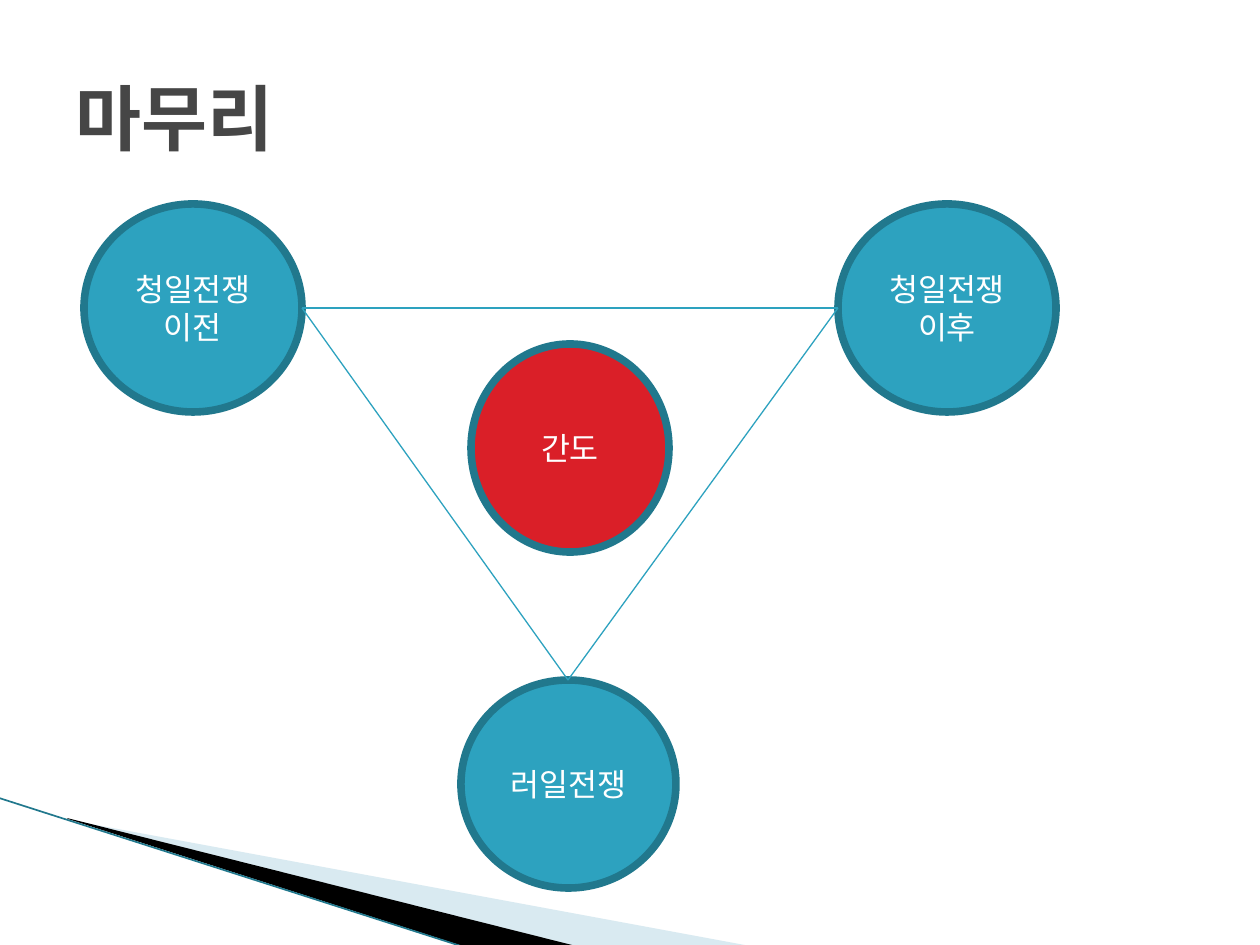
"""Build the closing slide: three war periods linked in a triangle around Gando."""
from lxml import etree
from pptx import Presentation
from pptx.dml.color import RGBColor
from pptx.enum.shapes import MSO_CONNECTOR, MSO_SHAPE
from pptx.enum.text import MSO_ANCHOR, MSO_AUTO_SIZE, PP_ALIGN
from pptx.oxml.ns import qn
from pptx.util import Pt

PX = 914400 / 126
STRAIGHT = MSO_CONNECTOR.STRAIGHT
OVAL = MSO_SHAPE.OVAL
MIDDLE = MSO_ANCHOR.MIDDLE
NO_AUTOFIT = MSO_AUTO_SIZE.NONE
LEFT, CENTER = PP_ALIGN.LEFT, PP_ALIGN.CENTER
FONT = "DejaVu Sans Mono"
COLORS = {
    "title": "464646", "period": "2DA2BF", "center": "DA1F28",
    "outline": "21788D", "label": "FFFFFF", "pale": "A0CBDC", "black": "000000",
}


def emu(*lengths):
    return [round(length * PX) for length in lengths]


def format_text(frame, color, align, formats):
    frame.word_wrap = True
    frame.auto_size = NO_AUTOFIT
    frame.vertical_anchor = MIDDLE
    for paragraph in frame.paragraphs:
        paragraph.alignment = align
        for name, value in formats.items():
            setattr(paragraph.runs[0].font, name, value)
        paragraph.runs[0].font.color.rgb = RGBColor.from_string(COLORS[color])


deck = Presentation()
deck.slide_width, deck.slide_height = emu(1260, 945)
slide = deck.slides.add_slide(deck.slide_layouts[5])
shapes = slide.shapes

wedges = [
    ("pale", 40, [(69, 820), (750, 946), (575, 946), (69, 819)]),
    ("black", 100, [(67, 818), (576, 946), (469, 948), (68, 819)]),
]
for color, opacity, corners in wedges:
    builder = shapes.build_freeform(*corners[0], scale=PX)
    builder.add_line_segments(corners[1:], close=True)
    wedge = builder.convert_to_shape()
    wedge.shadow.inherit = False
    wedge.fill.solid()
    wedge.fill.fore_color.rgb = RGBColor.from_string(COLORS[color])
    wedge.line.fill.background()
    if opacity < 100:
        tint = wedge.fill._xPr.find(qn("a:solidFill"))[0]
        etree.SubElement(tint, qn("a:alpha"), val=str(opacity * 1000))

title = shapes.title
title.left, title.top, title.width, title.height = emu(63, 38, 1134, 158)
title.text_frame.text = "마무리"
format_text(title.text_frame, "title", LEFT,
            {"size": Pt(41), "bold": True, "name": FONT})

circles = [
    ("청일전쟁이전", "period", (84, 204, 218, 208)),
    ("청일전쟁\n이후", "period", (838, 204, 218, 208)),
    ("러일전쟁", "period", (461, 680, 215, 208)),
    ("간도", "center", (471, 344, 198, 208)),
]
for label, color, box in circles:
    circle = shapes.add_shape(OVAL, *emu(*box))
    circle.shadow.inherit = False
    circle.fill.solid()
    circle.fill.fore_color.rgb = RGBColor.from_string(COLORS[color])
    circle.line.color.rgb = RGBColor.from_string(COLORS["outline"])
    circle.line.width = Pt(4.33)
    circle.text_frame.text = label
    format_text(circle.text_frame, "label", CENTER,
                {"size": Pt(18), "name": FONT})

before, after, russian = (302, 308), (838, 308), (568, 680)
links = [
    ((-1, 798), (467, 948), "outline", 0.95),
    (before, after, "period", 0.75),
    (before, russian, "period", 0.75),
    (russian, after, "period", 0.75),
]
for start, end, color, weight in links:
    link = shapes.add_connector(STRAIGHT, *emu(*start, *end))
    link.line.color.rgb = RGBColor.from_string(COLORS[color])
    link.line.width = Pt(weight)
    etree.SubElement(link._element.spPr, qn("a:effectLst"))

deck.save("out.pptx")
